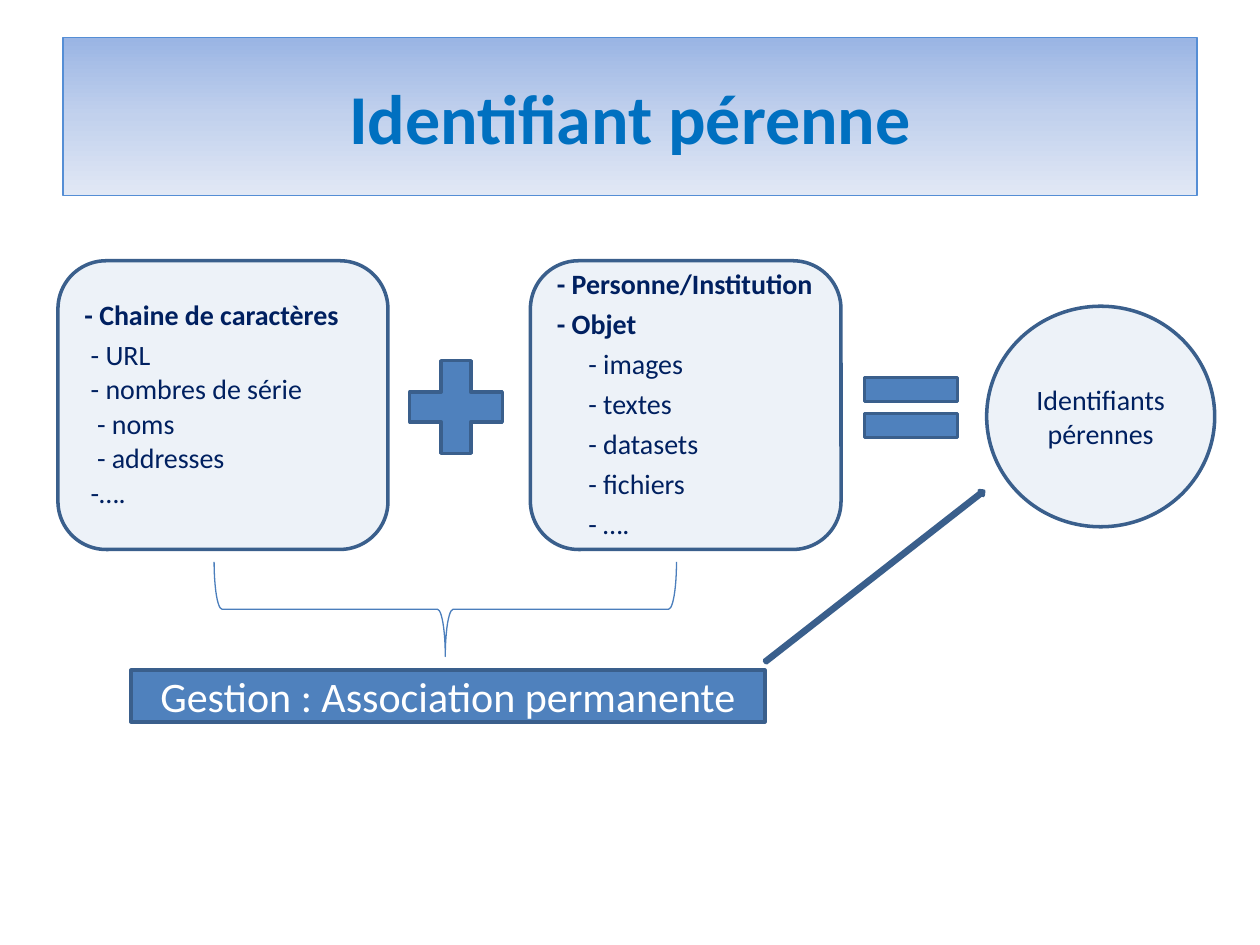
import copy

import pptx
import pptx.dml.color
import pptx.enum.shapes
import pptx.enum.text
import pptx.oxml.ns
import pptx.util
from lxml import etree

Pt = pptx.util.Pt
SHAPE = pptx.enum.shapes.MSO_SHAPE
ALIGN = pptx.enum.text.PP_ALIGN
MIDDLE = pptx.enum.text.MSO_ANCHOR.MIDDLE


def rgb(value):
    return pptx.dml.color.RGBColor.from_string(value)


class SlideBuilder:
    font = "Calibri"
    accent = "4F81BD"
    outline = "3A5F8C"
    ink = "002060"

    def __init__(self, slide):
        self.slide = slide

    def format_runs(self, paragraph, size, color, bold=False):
        for run in paragraph.runs:
            run.font.name = self.font
            run.font.size = Pt(size)
            run.font.bold = bold
            run.font.color.rgb = rgb(color)

    def border(self, shape, color, width):
        shape.line.color.rgb = rgb(color)
        shape.line.width = Pt(width)

    def title(self, text, left, top, width, height, gradient):
        banner = self.slide.shapes.title
        banner.left, banner.top = Pt(left), Pt(top)
        banner.width, banner.height = Pt(width), Pt(height)
        banner.fill.gradient()
        banner.fill.gradient_angle = 270
        first_stop = banner.fill.gradient_stops[0]._gs
        first_stop.addnext(copy.deepcopy(first_stop))
        for index, color in enumerate(gradient):
            stop = banner.fill.gradient_stops[index]
            stop.position = index / (len(gradient) - 1)
            stop.color.rgb = rgb(color)
        self.border(banner, "558ED5", 0.75)
        banner.text_frame.text = text
        banner.text_frame.vertical_anchor = MIDDLE
        heading = banner.text_frame.paragraphs[0]
        heading.alignment = ALIGN.CENTER
        self.format_runs(heading, 40, "0070C0", True)

    def symbol(self, kind, left, top, width, height, rotation=0):
        symbol = self.slide.shapes.add_shape(
            kind, Pt(left), Pt(top), Pt(width), Pt(height))
        symbol.shadow.inherit = False
        symbol.rotation = rotation
        symbol.fill.solid()
        symbol.fill.fore_color.rgb = rgb(self.accent)
        self.border(symbol, self.outline, 2)
        return symbol

    def brace(self, left, top, width, height):
        brace = self.symbol(SHAPE.LEFT_BRACE, left, top, width, height, 270)
        brace.fill.background()
        self.border(brace, "4B7EBC", 0.75)

    def tint(self, shape):
        color = shape.fill._xPr.find(".//" + pptx.oxml.ns.qn("a:srgbClr"))
        etree.SubElement(color, pptx.oxml.ns.qn("a:alpha"), val="10000")

    def label(self, shape, text, size, color):
        frame = shape.text_frame
        frame.text = text
        frame.word_wrap = True
        frame.vertical_anchor = MIDDLE
        frame.paragraphs[0].alignment = ALIGN.CENTER
        self.format_runs(frame.paragraphs[0], size, color)

    def card(self, left, width, entries):
        card = self.symbol(SHAPE.ROUNDED_RECTANGLE, left, 149, width, 165)
        self.tint(card)
        frame = card.text_frame
        frame.word_wrap = True
        frame.vertical_anchor = MIDDLE
        frame.text = "\n".join(text for text, *_ in entries)
        for paragraph, (_, level, indent, bold, gap) in zip(frame.paragraphs, entries):
            paragraph.level = level
            paragraph.alignment = ALIGN.LEFT
            paragraph.line_spacing = 0.9
            paragraph.space_after = Pt(gap)
            paragraph._p.get_or_add_pPr().set("marL", str(Pt(indent)))
            self.format_runs(paragraph, 16, self.ink, bold)


def main():
    deck = pptx.Presentation()
    deck.slide_width, deck.slide_height = Pt(720), Pt(540)
    builder = SlideBuilder(deck.slides.add_slide(deck.slide_layouts[5]))

    builder.title("Identifiant pérenne", 36, 21.6, 648, 90,
                  ["9AB5E4", "C2D1ED", "E1E8F5"])

    strings = [("- URL", 3.6), ("- nombres de série", 3.6), ("- noms", 7.2),
               ("- addresses", 7.2), ("-….", 3.6)]
    builder.card(33.1, 188.6, [("- Chaine de caractères", 0, 0, True, 5.6)]
                 + [(text, 1, indent, False, 2.4) for text, indent in strings])

    referents = ["- Personne/Institution", "- Objet"]
    objects = ["- images", "- textes", "- datasets", "- fichiers", "- …."]
    builder.card(303.1, 177.5, [(text, 0, 0, True, 5.6) for text in referents]
                 + [(text, 0, 18, False, 5.6) for text in objects])

    identifiers = builder.symbol(SHAPE.OVAL, 563.8, 175, 130.3, 126)
    builder.tint(identifiers)
    builder.label(identifiers, "Identifiants pérennes", 16, builder.ink)

    builder.symbol(SHAPE.MATH_EQUAL, 484.6, 203.8, 72, 58.3)
    builder.brace(227.5, 216, 54, 264.2)
    management = builder.symbol(SHAPE.RECTANGLE, 74.9, 383, 362.2, 29.5)
    builder.label(management, "Gestion : Association permanente", 24, "FFFFFF")
    builder.symbol(SHAPE.RIGHT_ARROW, 420.5, 327.6, 158.4, 3.6, 322)
    builder.symbol(SHAPE.MATH_PLUS, 224.6, 196.6, 72, 72)

    deck.save("out.pptx")


if __name__ == "__main__":
    main()
